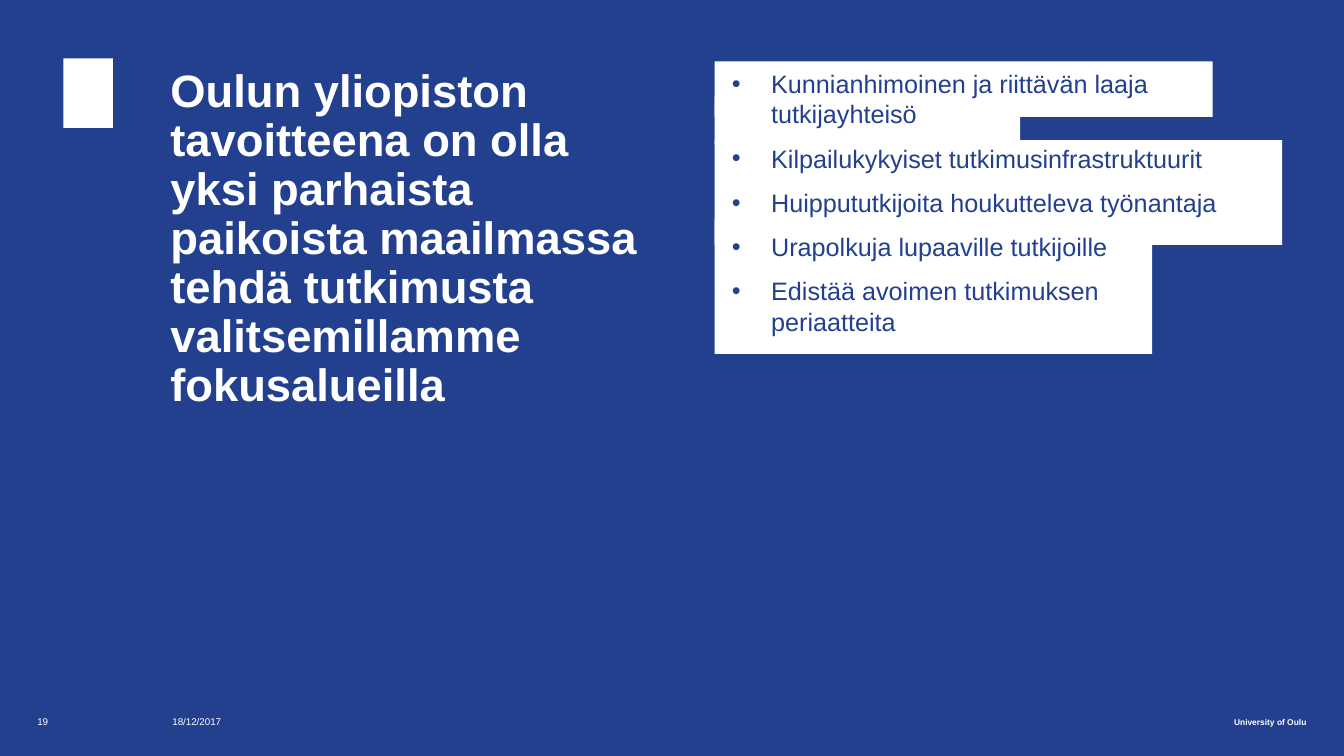
from copy import deepcopy

from pptx import Presentation
from pptx.dml.color import RGBColor
from pptx.enum.shapes import MSO_SHAPE
from pptx.enum.text import MSO_ANCHOR, MSO_AUTO_SIZE, PP_ALIGN
from pptx.oxml.ns import qn
from pptx.util import Inches, Pt

BLUE, WHITE = "23408F", "FFFFFF"
LEFT_EDGE = 7.09   # shared left side of the white steps
FOOTER_TOP, FOOTER_HEIGHT = 7.04, 0.24


def paint(color_format, value):
    color_format.rgb = RGBColor.from_string(value)


def write(para, text, size, color=WHITE, bold=False, align=PP_ALIGN.LEFT,
          line_spacing=1.0, space_after=0):
    """Fill a paragraph; a vertical tab in the text is a line break."""
    para.text = text
    para.alignment = align
    para.line_spacing = line_spacing
    para.space_before, para.space_after = Pt(0), Pt(space_after)
    for span in para.runs:
        span.font.name, span.font.size, span.font.bold = "Arial", Pt(size), bold
        paint(span.font.color, color)
    for line_break in para._p.findall(qn("a:br")):
        line_break.append(deepcopy(para.runs[0]._r.rPr))


deck = Presentation()
deck.slide_width, deck.slide_height = Inches(13.333), Inches(7.5)
page = deck.slides.add_slide(deck.slide_layouts[1])
page.background.fill.solid()
paint(page.background.fill.fore_color, BLUE)

# Plain emblem block, then the white steps behind the list
blocks = [
    (0.63, 0.58, 0.49, 0.69),
    (LEFT_EDGE, 0.61, 4.94, 0.55),
    (LEFT_EDGE, 1.39, 5.63, 1.04),
    (LEFT_EDGE, 0.96, 3.03, 0.47),
    (LEFT_EDGE, 2.17, 4.34, 1.34),
]
for block in blocks:
    box = page.shapes.add_shape(MSO_SHAPE.RECTANGLE, *map(Inches, block))
    box.shadow.inherit = False
    box.fill.solid()
    paint(box.fill.fore_color, WHITE)
    box.line.fill.background()

# Title and list placeholders
title, body = page.shapes.title, page.placeholders[1]
for holder, place in ((title, (1.59, 0.63, 4.96, 3.9)),
                      (body, (7.16, 0.63, 6.22, 6.27))):
    holder.left, holder.top, holder.width, holder.height = map(Inches, place)
    holder.text_frame.word_wrap = True
    holder.text_frame.auto_size = MSO_AUTO_SIZE.NONE
    holder.text_frame.vertical_anchor = MSO_ANCHOR.TOP

write(title.text_frame.paragraphs[0],
      "Oulun yliopiston tavoitteena on olla yksi parhaista paikoista maailmassa "
      "tehdä tutkimusta valitsemillamme fokusalueilla",
      32.4, bold=True, line_spacing=0.9)

goals = [
    "Kunnianhimoinen ja riittävän laaja \vtutkijayhteisö",
    "Kilpailukykyiset tutkimusinfrastruktuurit",
    "Huippututkijoita houkutteleva työnantaja",
    "Urapolkuja lupaaville tutkijoille",
    "Edistää avoimen tutkimuksen \vperiaatteita",
]
for index, goal in enumerate(goals):
    frame = body.text_frame
    para = frame.add_paragraph() if index else frame.paragraphs[0]
    properties = para._p.get_or_add_pPr()
    properties.set("marL", str(Inches(0.39)))
    properties.set("indent", str(-Inches(0.39)))
    bullet = properties.makeelement(qn("a:buChar"), {"char": "•"})
    properties.append(bullet)
    write(para, goal, 18, BLUE, space_after=10)
body.element.getparent().append(body.element)  # list in front of the steps

# Footer
footers = [
    (0.37, 0.42, "19", dict(size=7)),
    (1.71, 0.72, "18/12/2017", dict(size=7)),
    (10.62, 2.34, "University of Oulu", dict(size=6, bold=True, align=PP_ALIGN.RIGHT)),
]
for left, width, text, look in footers:
    box = page.shapes.add_textbox(Inches(left), Inches(FOOTER_TOP),
                                  Inches(width), Inches(FOOTER_HEIGHT))
    frame = box.text_frame
    frame.word_wrap = True
    frame.vertical_anchor = MSO_ANCHOR.MIDDLE
    frame.margin_left = frame.margin_right = frame.margin_top = frame.margin_bottom = 0
    write(frame.paragraphs[0], text, **look)

deck.save("out.pptx")
